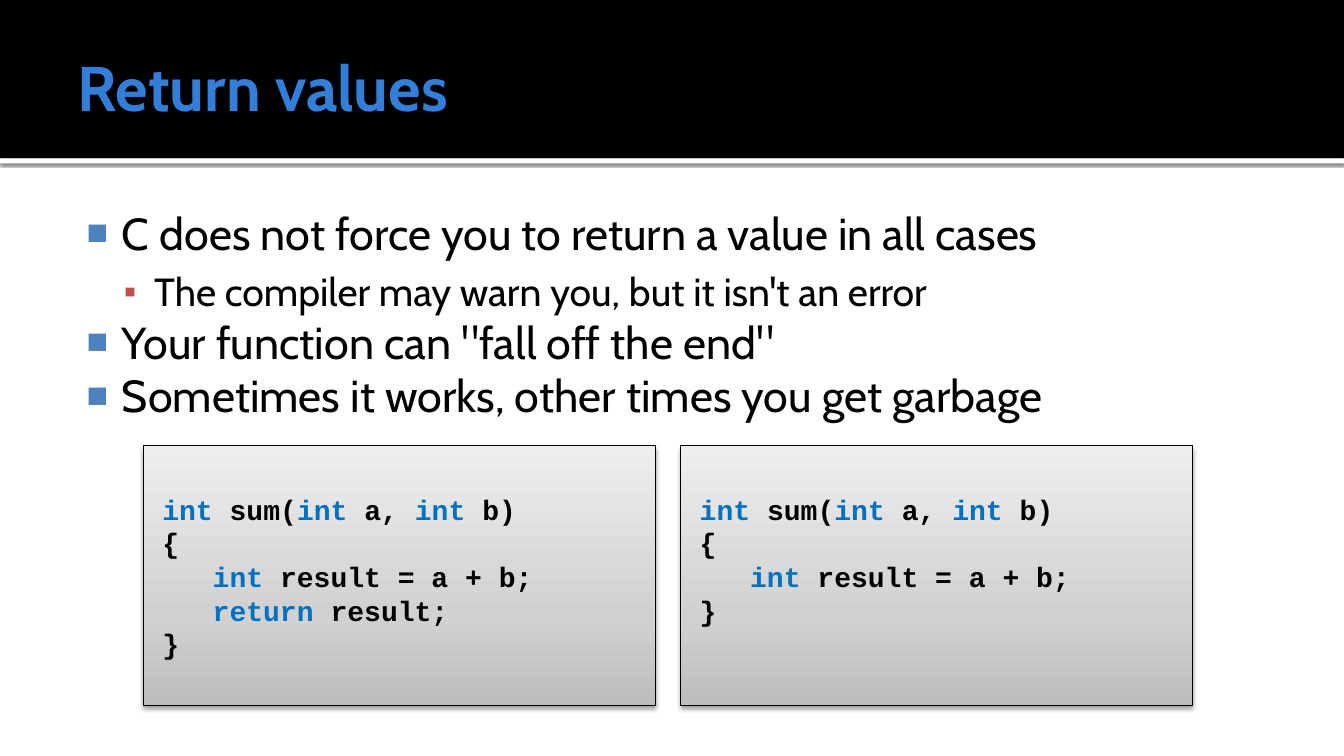
"""Build the slide on return values in C."""
from dataclasses import dataclass

from lxml.etree import SubElement
from pptx import Presentation
from pptx.dml.color import RGBColor
from pptx.enum.shapes import MSO_SHAPE
from pptx.enum.text import MSO_ANCHOR
from pptx.oxml.ns import qn
from pptx.util import Inches, Pt

TITLE = "Return values"
BULLETS = [
    (0, "C does not force you to return a value in all cases"),
    (1, "The compiler may warn you, but it isn't an error"),
    (0, "Your function can \"fall off the end\""),
    (0, "Sometimes it works, other times you get garbage"),
]
SIGNATURE = ["`int` sum(`int` a, `int `b)", "{", "\t`int `result = a + b;"]
CODE_SAMPLES = [
    SIGNATURE + ["\t`return` result;", "}"],
    SIGNATURE + ["}"],
]


@dataclass(frozen=True)
class Theme:
    body_font: str = "Cabin"
    code_font: str = "Courier New"
    title_size: float = 45
    code_size: float = 20
    code_spacing: float = 24.1
    black: str = "000000"
    white: str = "FFFFFF"
    title: str = "337ED9"
    keyword: str = "0070C0"
    gradient: tuple = ((0, "BDBDBD"), (35, "D1D1D1"), (100, "EEEEEE"))


@dataclass(frozen=True)
class BulletLevel:
    size: float
    indent: float
    hanging: float
    symbol: str
    color: str
    scale: int
    space_before: float


THEME = Theme()
LEVELS = [
    BulletLevel(32, 0.48, 0.35, "■", "4F81BD", 80, 0),
    BulletLevel(28, 0.8, 0.3, "▪", "C0504D", 90, 5.6),
]
SLIDE_WIDTH, SLIDE_HEIGHT = 13.33, 7.5
HEADER_HEIGHT, RULE_HEIGHT = 1.57, 0.05
CODE_LEFT, CODE_TOP, CODE_WIDTH, CODE_HEIGHT = 1.42, 4.42, 5.08, 2.58
CODE_GAP = 0.25


def format_run(run, font, size, color, bold=False):
    run.font.name = font
    run.font.size = Pt(size)
    run.font.bold = bold
    run.font.color.rgb = RGBColor.from_string(color)


def set_frame(shape, insets, anchor=MSO_ANCHOR.TOP):
    frame = shape.text_frame
    frame.word_wrap = True
    frame.vertical_anchor = anchor
    (frame.margin_left, frame.margin_top,
     frame.margin_right, frame.margin_bottom) = map(Inches, insets)
    return frame


def set_indent(paragraph, left, hanging=0):
    properties = paragraph._p.get_or_add_pPr()
    properties.set("marL", str(Inches(left)))
    properties.set("indent", str(-Inches(hanging)))
    return properties


def add_rectangle(slide, left, top, width, height):
    shape = slide.shapes.add_shape(
        MSO_SHAPE.RECTANGLE, *map(Inches, (left, top, width, height)))
    shape.shadow.inherit = False
    return shape


def add_band(slide, top, height, color):
    band = add_rectangle(slide, 0, top, SLIDE_WIDTH, height)
    band.fill.solid()
    band.fill.fore_color.rgb = RGBColor.from_string(color)
    band.line.fill.background()
    return band


def add_shadow(shape, opacity, blur, distance):
    effects = shape._element.spPr.find(qn("a:effectLst"))
    shadow = SubElement(effects, qn("a:outerShdw"), blurRad=str(Pt(blur)),
                        dist=str(Pt(distance)), dir="5400000", rotWithShape="0")
    color = SubElement(shadow, qn("a:srgbClr"), val=THEME.black)
    SubElement(color, qn("a:alpha"), val=str(opacity * 1000))


def fill_gradient(shape):
    shape.fill.gradient()
    shape.fill.gradient_angle = 90
    stops = shape._element.spPr.find(".//" + qn("a:gsLst"))
    for stop in list(stops):
        stops.remove(stop)
    for position, color in THEME.gradient:
        stop = SubElement(stops, qn("a:gs"), pos=str(position * 1000))
        SubElement(stop, qn("a:srgbClr"), val=color)


def add_title(slide):
    box = slide.shapes.add_textbox(*map(Inches, (0.67, 0.17, 12, 1.37)))
    frame = set_frame(box, (0.1, 0.05, 0.05, 0.05), MSO_ANCHOR.MIDDLE)
    frame.text = TITLE
    format_run(frame.paragraphs[0].runs[0], THEME.body_font,
               THEME.title_size, THEME.title, True)


def add_bullets(slide):
    box = slide.shapes.add_textbox(*map(Inches, (0.67, 1.94, 12, 2.39)))
    frame = set_frame(box, (0.06, 0.1, 0.1, 0.05))
    frame.text = "\n".join(text for _, text in BULLETS)
    for paragraph, (depth, _) in zip(frame.paragraphs, BULLETS):
        level = LEVELS[depth]
        paragraph.level = depth
        paragraph.space_before = Pt(level.space_before)
        properties = set_indent(paragraph, level.indent, level.hanging)
        color = SubElement(properties, qn("a:buClr"))
        SubElement(color, qn("a:srgbClr"), val=level.color)
        SubElement(properties, qn("a:buSzPct"), val=str(level.scale * 1000))
        SubElement(properties, qn("a:buFont"), typeface="Arial")
        SubElement(properties, qn("a:buChar"), char=level.symbol)
        format_run(paragraph.runs[0], THEME.body_font, level.size, THEME.black)


def add_code(slide, left, lines):
    panel = add_rectangle(slide, left, CODE_TOP, CODE_WIDTH, CODE_HEIGHT)
    fill_gradient(panel)
    panel.line.color.rgb = RGBColor.from_string(THEME.black)
    panel.line.width = Pt(0.5)
    add_shadow(panel, 38, 3.5, 2)
    frame = set_frame(panel, (0.06, 0.46, 0.1, 0.05))
    frame.text = "\n".join(lines)
    for paragraph, line in zip(frame.paragraphs, lines):
        paragraph.text = ""
        paragraph.line_spacing = Pt(THEME.code_spacing)
        set_indent(paragraph, 0.13).set("algn", "l")
        for index, part in enumerate(line.split("`")):
            if part:
                run = paragraph.add_run()
                run.text = part
                color = THEME.keyword if index % 2 else THEME.black
                format_run(run, THEME.code_font, THEME.code_size, color, True)


def main():
    presentation = Presentation()
    presentation.slide_width = Inches(SLIDE_WIDTH)
    presentation.slide_height = Inches(SLIDE_HEIGHT)
    slide = presentation.slides.add_slide(presentation.slide_layouts[6])
    rule = add_band(slide, HEADER_HEIGHT, RULE_HEIGHT, THEME.white)
    add_shadow(rule, 60, 2.5, 0.8)
    add_band(slide, 0, HEADER_HEIGHT, THEME.black)
    add_title(slide)
    add_bullets(slide)
    for column, lines in enumerate(CODE_SAMPLES):
        add_code(slide, CODE_LEFT + column * (CODE_WIDTH + CODE_GAP), lines)
    presentation.save("out.pptx")


if __name__ == "__main__":
    main()
